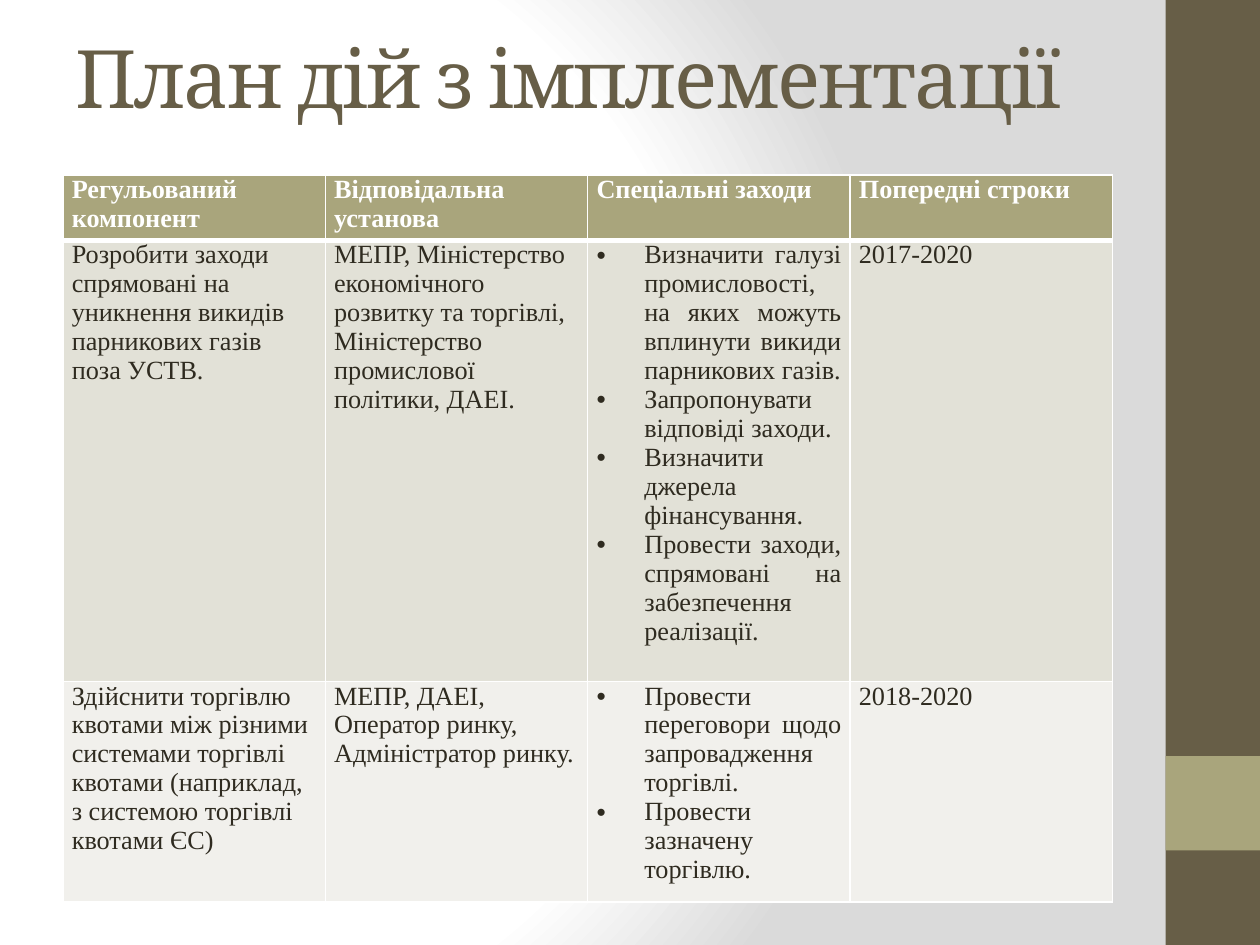
import pptx
import pptx.dml.color
import pptx.enum.shapes
import pptx.enum.text
import pptx.oxml
import pptx.oxml.ns
import pptx.util
from lxml import etree

Inches = pptx.util.Inches
Pt = pptx.util.Pt
RGBColor = pptx.dml.color.RGBColor
MSO_ANCHOR = pptx.enum.text.MSO_ANCHOR
PP_ALIGN = pptx.enum.text.PP_ALIGN
qn = pptx.oxml.ns.qn

BROWN = RGBColor(0x67, 0x5E, 0x47)
OLIVE = RGBColor(0xA9, 0xA5, 0x7C)
INK = RGBColor(0x2F, 0x2B, 0x20)
WHITE = RGBColor(0xFF, 0xFF, 0xFF)
GREY = RGBColor(0xDA, 0xDA, 0xDA)
BAND_DARK = RGBColor(0xE2, 0xE1, 0xD7)
BAND_LIGHT = RGBColor(0xF1, 0xF0, 0xEC)

HEADER = ["Регульований компонент", "Відповідальна установа",
          "Спеціальні заходи", "Попередні строки"]
ACTIONS = [
    ["Розробити заходи спрямовані на уникнення викидів парникових газів поза УСТВ.",
     "МЕПР, Міністерство економічного розвитку та торгівлі, "
     "Міністерство промислової політики, ДАЕІ.",
     ["Визначити галузі промисловості, на яких можуть вплинути викиди парникових газів.",
      "Запропонувати відповіді заходи.",
      "Визначити джерела фінансування.",
      "Провести заходи, спрямовані на забезпечення реалізації."],
     "2017-2020"],
    ["Здійснити торгівлю квотами між різними системами торгівлі квотами "
     "(наприклад, з системою торгівлі квотами ЄС)",
     "МЕПР, ДАЕІ, Оператор ринку, Адміністратор ринку.",
     ["Провести переговори щодо запровадження торгівлі.",
      "Провести зазначену торгівлю."],
     "2018-2020"],
]
ROW_HEIGHTS = [0.52, 3.32, 1.28]
ROW_FILLS = [OLIVE, BAND_DARK, BAND_LIGHT]


class Deck:
    title_font = "Cambria"
    body_font = "Times New Roman"

    def __init__(self, width, height):
        self.prs = pptx.Presentation()
        self.prs.slide_width = Inches(width)
        self.prs.slide_height = Inches(height)
        self.s = self.prs.slides.add_slide(self.prs.slide_layouts[6])

    def background(self, stops):
        fill = self.s.background.fill
        fill.gradient()
        grad = self.s.background._cSld.find(".//" + qn("a:gradFill"))
        for child in list(grad):
            grad.remove(child)
        gs_list = etree.SubElement(grad, qn("a:gsLst"))
        for pos, color in stops:
            gs = etree.SubElement(gs_list, qn("a:gs"), pos=str(pos * 1000))
            etree.SubElement(gs, qn("a:srgbClr"), val=str(color))
        circle = etree.SubElement(grad, qn("a:path"))
        circle.set("path", "circle")
        etree.SubElement(circle, qn("a:fillToRect"),
                         l="20000", t="50000", r="100000", b="50000")

    def block(self, left, top, width, height, color):
        sp = self.s.shapes.add_shape(
            pptx.enum.shapes.MSO_SHAPE.RECTANGLE,
            Inches(left), Inches(top), Inches(width), Inches(height))
        sp.shadow.inherit = False
        sp.fill.solid()
        sp.fill.fore_color.rgb = color
        sp.line.fill.background()

    def format(self, p, font, size, color, bold=False):
        for r in p.runs:
            r.font.name = font
            r.font.size = Pt(size)
            r.font.color.rgb = color
            r.font.bold = bold

    def title(self, text, left, top, width, height):
        sp = self.s.shapes.add_textbox(
            Inches(left), Inches(top), Inches(width), Inches(height))
        tf = sp.text_frame
        tf.word_wrap = True
        tf.vertical_anchor = MSO_ANCHOR.MIDDLE
        tf.text = text
        p = tf.paragraphs[0]
        self.format(p, self.title_font, 46, BROWN)
        p.runs[0].font._element.set("spc", "-100")

    def bullet(self, p):
        pPr = p._p.get_or_add_pPr()
        indent = Inches(0.38)
        pPr.set("marL", str(indent))
        pPr.set("indent", str(-indent))
        etree.SubElement(pPr, qn("a:buFont"), typeface="Arial")
        etree.SubElement(pPr, qn("a:buChar"), char="•")

    def borders(self, cell, top, bottom):
        tcPr = cell._tc.get_or_add_tcPr()
        for side, width in (("L", 1), ("R", 1), ("T", top), ("B", bottom)):
            ln = etree.SubElement(tcPr, qn("a:ln" + side), w=str(Pt(width)))
            fill = etree.SubElement(ln, qn("a:solidFill"))
            etree.SubElement(fill, qn("a:srgbClr"), val=str(WHITE))

    def cell(self, cell, content, row, col):
        header = row == 0
        cell.margin_left = cell.margin_right = Inches(0.07)
        cell.margin_top = cell.margin_bottom = 0
        self.borders(cell, 3 if row == 1 else 1, 3 if header else 1)
        cell.fill.solid()
        cell.fill.fore_color.rgb = ROW_FILLS[row]
        tf = cell.text_frame
        bulleted = isinstance(content, list)
        tf.text = "\n".join(content) if bulleted else content
        for p in tf.paragraphs:
            if header or col >= 2:
                p.alignment = PP_ALIGN.JUSTIFY
            if bulleted:
                self.bullet(p)
            self.format(p, self.body_font, 15, WHITE if header else INK, header)

    def table(self, rows, left, top, width):
        frame = self.s.shapes.add_table(
            len(rows), len(rows[0]), Inches(left), Inches(top),
            Inches(width), Inches(sum(ROW_HEIGHTS)))
        table = frame.table
        table.first_row = False
        table.horz_banding = False
        for i, row in enumerate(rows):
            table.rows[i].height = Inches(ROW_HEIGHTS[i])
            for j, content in enumerate(row):
                self.cell(table.cell(i, j), content, i, j)


def main():
    deck = Deck(10, 7.5)
    deck.background([(0, WHITE), (75, WHITE), (100, GREY)])
    deck.block(9.25, 0, 0.75, 7.5, BROWN)
    deck.block(9.25, 6, 0.75, 0.75, OLIVE)
    deck.title("План дій з імплементації", 0.5, 0.3, 8.33, 0.61)
    deck.table([HEADER] + ACTIONS, 0.5, 1.39, 8.33)
    deck.prs.save("out.pptx")


if __name__ == "__main__":
    main()
